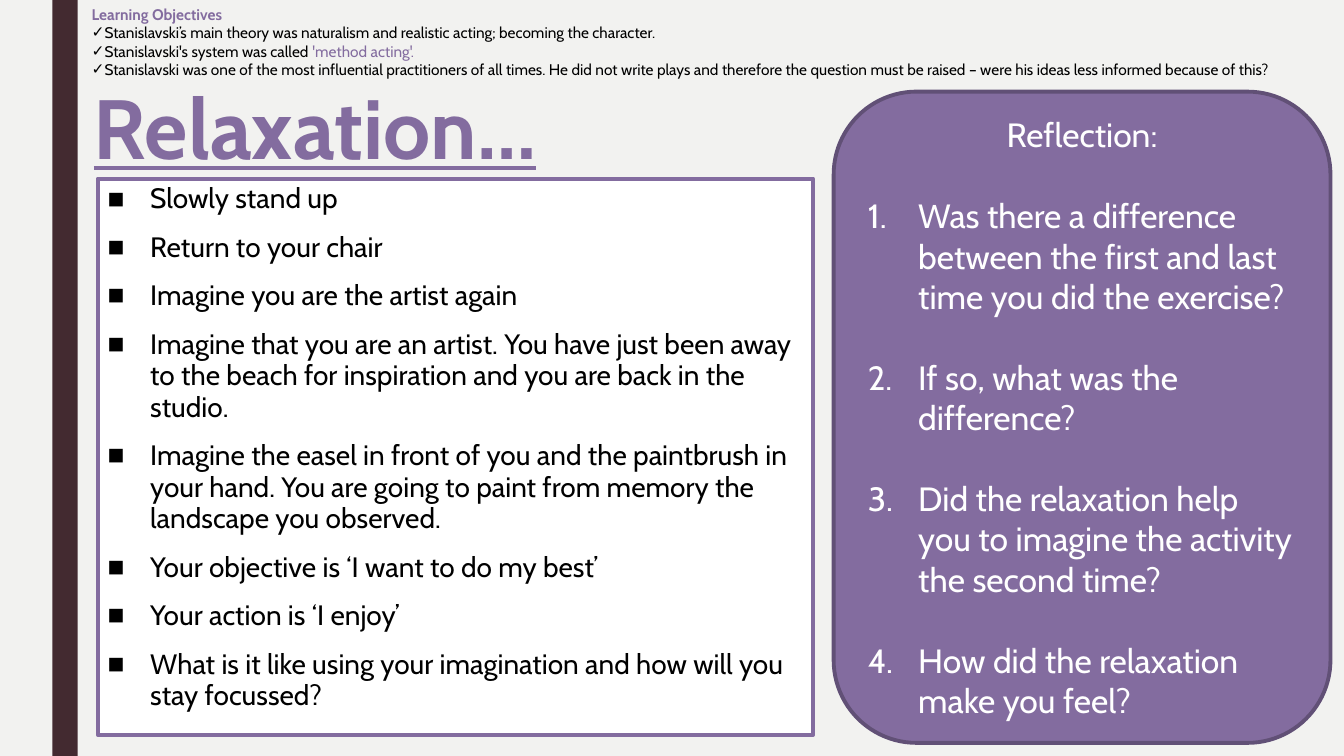
"""Build the drama lesson slide on relaxation and reflection."""
import pptx
import pptx.dml.color
import pptx.enum.shapes
import pptx.enum.text
import pptx.util
from lxml import etree
from pptx.oxml.ns import qn

Cm = pptx.util.Cm
Pt = pptx.util.Pt
Shape = pptx.enum.shapes.MSO_SHAPE
Align = pptx.enum.text.PP_ALIGN
Anchor = pptx.enum.text.MSO_ANCHOR
Fit = pptx.enum.text.MSO_AUTO_SIZE

HUES = {
    "back": "F2F2F0",
    "bar": "432A30",
    "main": "836C9F",
    "edge": "615076",
    "white": "FFFFFF",
    "black": "000000",
}
AIMS = [
    ("Stanislavski’s main theory was naturalism and realistic acting; becoming the character.", ""),
    ("Stanislavski's system was called 'method acting'.", "'method acting'."),
    ("Stanislavski was one of the most influential practitioners of all times. He did not write "
     "plays and therefore the question must be raised – were his ideas less informed because of this?", ""),
]
STEPS = [
    "Slowly stand up",
    "Return to your chair",
    "Imagine you are the artist again",
    "Imagine that you are an artist. You have just been away to the beach for inspiration "
    "and you are back in the studio.",
    "Imagine the easel in front of you and the paintbrush in your hand. You are going to "
    "paint from memory the landscape you observed.",
    "Your objective is ‘I want to do my best’",
    "Your action is ‘I enjoy’",
    "What is it like using your imagination and how will you stay focussed?",
]
ASKS = [
    "Was there a difference between the first and last time you did the exercise?",
    "If so, what was the difference?",
    "Did the relaxation help you to imagine the activity the second time?",
    "How did the relaxation make you feel?",
]


def hue(name):
    return pptx.dml.color.RGBColor.from_string(HUES[name])


def place(shape, left, top, width, height):
    shape.left, shape.top = Cm(left), Cm(top)
    shape.width, shape.height = Cm(width), Cm(height)


def paint(shape, fill, line=None):
    shape.fill.solid()
    shape.fill.fore_color.rgb = hue(fill)
    if line:
        shape.line.color.rgb = hue(line)
        shape.line.width = Pt(2.75)
    else:
        shape.line.fill.background()


def mark(para, sign, hang):
    props = para._p.get_or_add_pPr()
    props.set("marL", str(Cm(hang)))
    props.set("indent", str(-Cm(hang)))
    if sign == "1.":
        etree.SubElement(props, qn("a:buFont"), typeface="+mj-lt")
        etree.SubElement(props, qn("a:buAutoNum"), type="arabicPeriod")
    else:
        etree.SubElement(props, qn("a:buFont"), typeface="Arial")
        etree.SubElement(props, qn("a:buChar"), char=sign)


def write(frame, text, size, color="black", accent="", bold=False, under=False,
          sign="", hang=0, align=Align.LEFT, lead=1.0, before=0, after=0):
    first = not frame.text
    para = frame.paragraphs[0] if first else frame.add_paragraph()
    if sign:
        mark(para, sign, hang)
    para.alignment = align
    para.line_spacing = lead
    para.space_before = Pt(0 if first else before)
    para.space_after = Pt(after)
    for part in text.partition(accent) if accent else (text,):
        if part:
            run = para.add_run()
            run.text = part
            run.font.name = "Cabin"
            run.font.size = Pt(size)
            run.font.bold = bold
            run.font.underline = under
            run.font.color.rgb = hue("main" if part == accent else color)


def setup(shape, anchor=Anchor.TOP, fit=Fit.NONE):
    frame = shape.text_frame
    frame.word_wrap = True
    frame.auto_size = fit
    frame.vertical_anchor = anchor
    return frame


def block(slide, kind, box, fill, line=None):
    shape = slide.shapes.add_shape(kind, *map(Cm, box))
    shape.shadow.inherit = False
    paint(shape, fill, line)
    return shape


def head(slide):
    title = slide.shapes.title
    place(title, 2.11, 2.08, 27.97, 2.41)
    write(setup(title), "Relaxation…", 60, "main", bold=True, under=True, lead=0.89)


def steps(slide):
    body = slide.placeholders[1]
    place(body, 2.46, 4.5, 18.03, 14.02)
    paint(body, "white", "main")
    frame = setup(body)
    for step in STEPS:
        write(frame, step, 20, sign="■", hang=1.07, lead=0.94, before=10, after=2)


def aims(slide):
    box = slide.shapes.add_textbox(Cm(2.06), Cm(0), Cm(31.75), Cm(2.13))
    frame = setup(box, fit=Fit.SHAPE_TO_FIT_TEXT)
    write(frame, "Learning Objectives", 11, "main", bold=True)
    for text, accent in AIMS:
        write(frame, text, 11, accent=accent, sign="✓")


def asks(slide):
    panel = block(slide, Shape.FLOWCHART_ALTERNATE_PROCESS,
                  (21.01, 2.31, 12.52, 16.41), "main", "edge")
    frame = setup(panel, Anchor.MIDDLE)
    write(frame, "Reflection:", 24, "white", align=Align.CENTER)
    for ask in ASKS:
        write(frame, ask, 24, "white", sign="1.", hang=1.27, before=29)


def main():
    deck = pptx.Presentation()
    deck.slide_width, deck.slide_height = Cm(33.87), Cm(19.05)
    slide = deck.slides.add_slide(deck.slide_layouts[1])
    slide.background.fill.solid()
    slide.background.fill.fore_color.rgb = hue("back")
    block(slide, Shape.RECTANGLE, (1.32, 0, 0.64, 19.05), "bar")
    head(slide)
    steps(slide)
    aims(slide)
    asks(slide)
    deck.save("out.pptx")


if __name__ == "__main__":
    main()
